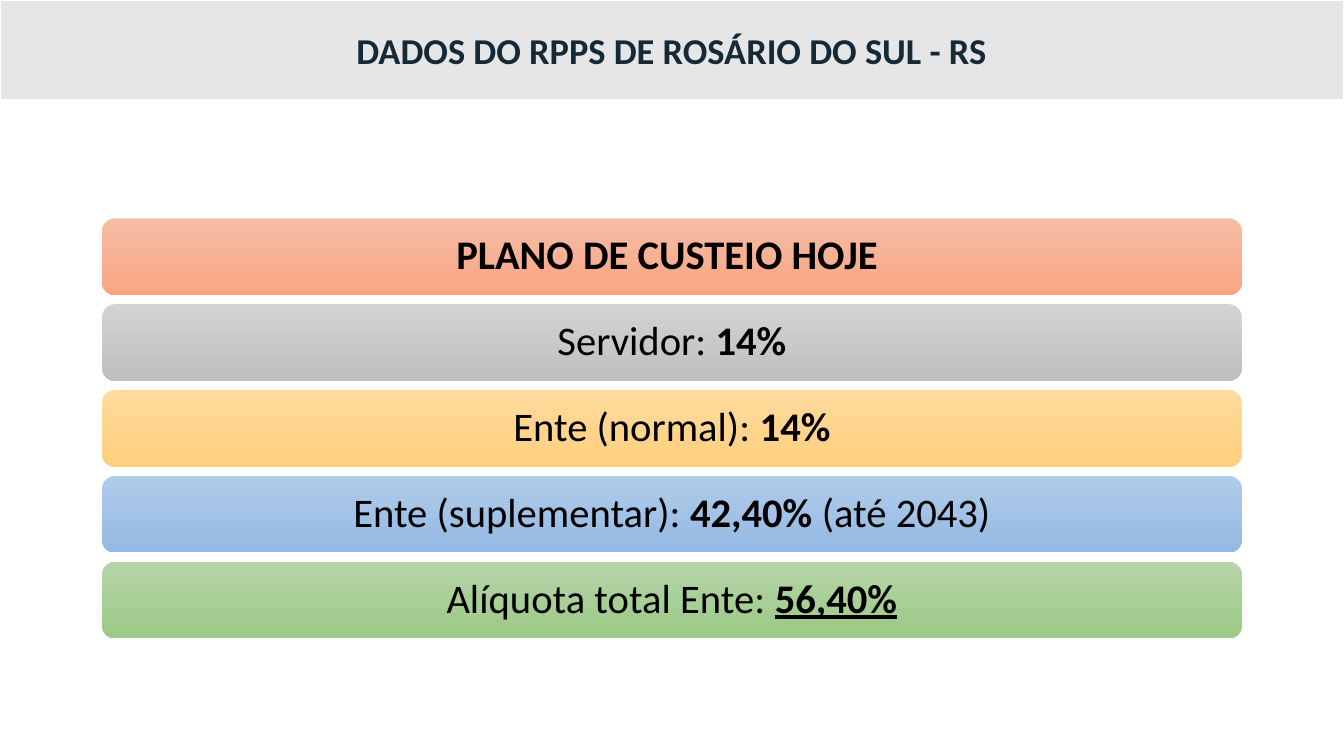
from dataclasses import dataclass
from pptx import Presentation
from pptx.dml.color import RGBColor
from pptx.enum.shapes import MSO_SHAPE
from pptx.enum.text import MSO_ANCHOR, MSO_AUTO_SIZE, PP_ALIGN
from pptx.util import Pt

ROUND = MSO_SHAPE.ROUNDED_RECTANGLE
MIDDLE = MSO_ANCHOR.MIDDLE
CENTER = PP_ALIGN.CENTER
NO_FIT = MSO_AUTO_SIZE.NONE


@dataclass(frozen=True)
class Theme:
    font: str = "Calibri"
    head: float = 26
    body: float = 29
    ink: str = "000000"
    navy: str = "162937"
    band: str = "E7E6E6"
    edge: str = "FFFFFF"
    bars: tuple = (
        ("F7BDA5", "F8A582"),
        ("D2D2D2", "C0C0C0"),
        ("FFDB9E", "FFD07C"),
        ("B1CBE9", "93B9E4"),
        ("B5D5A7", "9CC987"),
    )


THEME = Theme()
BOLD = {"bold": True}
TOTAL = {"bold": True, "underline": True}
PLAN = [
    [("PLANO DE CUSTEIO HOJE ", BOLD)],
    [("Servidor: ", {}), ("14%", BOLD)],
    [("Ente (normal): ", {}), ("14%", BOLD)],
    [("Ente (suplementar): ", {}), ("42,40%", BOLD), (" (até 2043)", {})],
    [("Alíquota total Ente: ", {}), ("56,40%", TOTAL)],
]


def apply(item, values):
    for name, value in values.items():
        setattr(item, name, value)


def write(shape, runs, size, color, inset, space):
    frame = shape.text_frame
    apply(frame, {"word_wrap": True, "auto_size": NO_FIT,
                  "vertical_anchor": MIDDLE, "margin_left": inset,
                  "margin_right": inset})
    para = frame.paragraphs[0]
    apply(para, {"alignment": CENTER, "line_spacing": space})
    for text, style in runs:
        run = para.add_run()
        run.text = text
        apply(run.font, {"name": THEME.font, "size": Pt(size), **style})
        run.font.color.rgb = RGBColor.from_string(color)


def add_head(slide, text, left, top, width, height):
    title = slide.shapes.title
    apply(title, {"left": Pt(left), "top": Pt(top),
                  "width": Pt(width), "height": Pt(height)})
    title.fill.solid()
    title.fill.fore_color.rgb = RGBColor.from_string(THEME.band)
    title.line.color.rgb = RGBColor.from_string(THEME.edge)
    title.line.width = Pt(1)
    write(title, [(text, BOLD)], THEME.head, THEME.navy, Pt(7.2), 1.0)


def add_plan(slide, rows, left, top, width, height, gap):
    tall = (height - gap * (len(rows) - 1)) / len(rows)
    for i, (runs, shades) in enumerate(zip(rows, THEME.bars)):
        y = top + i * (tall + gap)
        bar = slide.shapes.add_shape(
            ROUND, Pt(left), Pt(y), Pt(width), Pt(tall))
        bar.shadow.inherit = False
        bar.line.fill.background()
        bar.fill.gradient()
        bar.fill.gradient_angle = 270
        for stop, shade in zip(bar.fill.gradient_stops, shades):
            stop.color.rgb = RGBColor.from_string(shade)
            stop.position = shades.index(shade)
        write(bar, runs, THEME.body, THEME.ink, Pt(11.5), 0.9)


def main():
    deck = Presentation()
    apply(deck, {"slide_width": Pt(960), "slide_height": Pt(540)})
    slide = deck.slides.add_slide(deck.slide_layouts[5])
    add_head(slide, "DADOS DO RPPS DE ROSÁRIO DO SUL - RS", 0, 0, 960, 71.5)
    add_plan(slide, PLAN, 73, 156, 814, 300, 6.6)
    deck.save("out.pptx")


if __name__ == "__main__":
    main()
